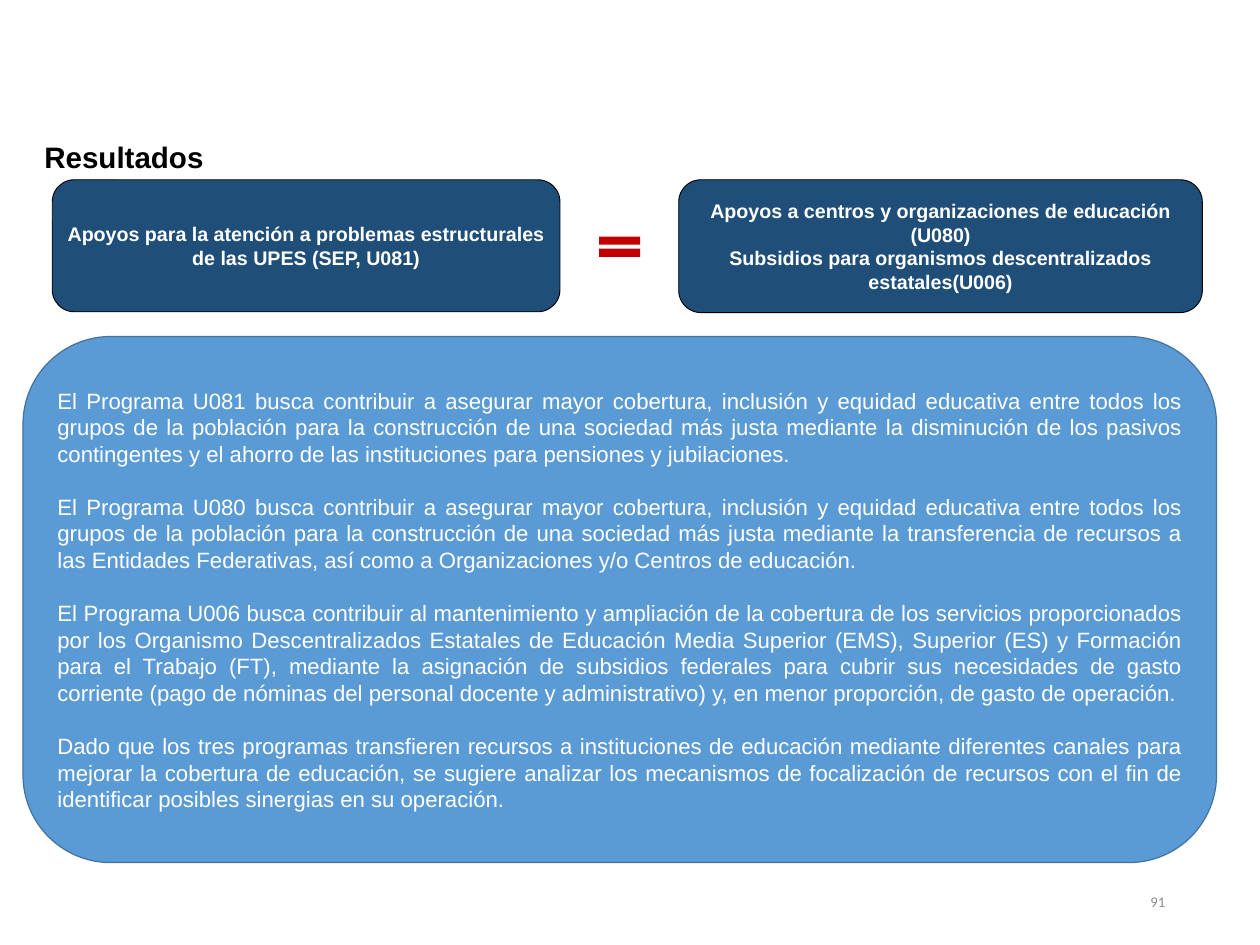
from pptx import Presentation
from pptx.dml.color import RGBColor
from pptx.enum.shapes import MSO_SHAPE
from pptx.enum.text import MSO_ANCHOR, MSO_AUTO_SIZE, PP_ALIGN
from pptx.util import Pt

ROUNDED = MSO_SHAPE.ROUNDED_RECTANGLE
EQUAL = MSO_SHAPE.MATH_EQUAL
MIDDLE = MSO_ANCHOR.MIDDLE
NO_AUTOFIT = MSO_AUTO_SIZE.NONE
LEFT, CENTER = PP_ALIGN.LEFT, PP_ALIGN.CENTER
RIGHT, JUSTIFY = PP_ALIGN.RIGHT, PP_ALIGN.JUSTIFY

BLACK = RGBColor(0x00, 0x00, 0x00)
WHITE = RGBColor(0xFF, 0xFF, 0xFF)
GRAY = RGBColor(0x8C, 0x8C, 0x8C)
NAVY = RGBColor(0x1F, 0x4E, 0x79)
RED = RGBColor(0xC0, 0x00, 0x00)
BLUE = RGBColor(0x5B, 0x9B, 0xD5)
BLUE_EDGE = RGBColor(0x43, 0x73, 0x9E)

EMU_PER_PX = 9144  # 100 px to the inch
TITLE_ONLY = 5

UPES_PROGRAM = ["Apoyos para la atención a problemas estructurales de las UPES (SEP, U081)"]
RELATED_PROGRAMS = [
    "Apoyos a centros y organizaciones de educación (U080)",
    "Subsidios para organismos descentralizados estatales(U006)",
]
FINDINGS = [
    "El Programa U081 busca contribuir a asegurar mayor cobertura, inclusión y equidad "
    "educativa entre todos los grupos de la población para la construcción de una sociedad "
    "más justa mediante la disminución de los pasivos contingentes y el ahorro de las "
    "instituciones para pensiones y jubilaciones.",
    "El Programa U080 busca contribuir a asegurar mayor cobertura, inclusión y equidad "
    "educativa entre todos los grupos de la población para la construcción de una sociedad "
    "más justa mediante la transferencia de recursos a las Entidades Federativas, así como a "
    "Organizaciones y/o Centros de educación.",
    "El Programa U006 busca contribuir al mantenimiento y ampliación de la cobertura de los "
    "servicios proporcionados por los Organismo Descentralizados Estatales de Educación Media "
    "Superior (EMS), Superior (ES) y Formación para el Trabajo (FT), mediante la asignación de "
    "subsidios federales para cubrir sus necesidades de gasto corriente (pago de nóminas del "
    "personal docente y administrativo) y, en menor proporción, de gasto de operación.",
    "Dado que los tres programas transfieren recursos a instituciones de educación mediante "
    "diferentes canales para mejorar la cobertura de educación, se sugiere analizar los "
    "mecanismos de focalización de recursos con el fin de identificar posibles sinergias en "
    "su operación.",
]


def px(*lengths):
    return [length * EMU_PER_PX for length in lengths]


class SlideBuilder:
    def __init__(self, deck, font="Arial"):
        self.slide = deck.slides.add_slide(deck.slide_layouts[TITLE_ONLY])
        self.font = font

    def set_text(self, box, texts, size, color, align, bold=False, font=None, gap=0):
        """Fill the box with one paragraph per text, gap points apart."""
        frame = box.text_frame
        frame.word_wrap = True
        frame.vertical_anchor = MIDDLE
        for index, text in enumerate(texts):
            para = frame.add_paragraph() if index else frame.paragraphs[0]
            para.text = text
            para.alignment = align
            para.space_before = Pt(gap if index else 0)
            para.font.name = font or self.font
            para.font.size = Pt(size)
            para.font.bold = bold
            para.font.color.rgb = color

    def title(self, place, text):
        box = self.slide.shapes.title
        box.left, box.top, box.width, box.height = px(*place)
        self.set_text(box, [text], 24, BLACK, LEFT, bold=True)
        frame = box.text_frame
        frame.word_wrap = False
        frame.auto_size = NO_AUTOFIT
        frame.margin_left, frame.margin_top, frame.margin_right, frame.margin_bottom = px(6, 6, 6, 6)

    def shape(self, kind, place, fill, edge=None, edge_width=0.75):
        shape = self.slide.shapes.add_shape(kind, *px(*place))
        shape.shadow.inherit = False
        shape.fill.solid()
        shape.fill.fore_color.rgb = fill
        if edge is None:
            shape.line.fill.background()
        else:
            shape.line.color.rgb = edge
            shape.line.width = Pt(edge_width)
        return shape

    def program(self, place, texts):
        box = self.shape(ROUNDED, place, NAVY, BLACK)
        self.set_text(box, texts, 16, WHITE, CENTER, bold=True)

    def findings(self, place, texts):
        box = self.shape(ROUNDED, place, BLUE, BLUE_EDGE, 1)
        self.set_text(box, texts, 18, WHITE, JUSTIFY, gap=21.6)

    def page_number(self, place, number):
        box = self.slide.shapes.add_textbox(*px(*place))
        self.set_text(box, [number], 12, GRAY, RIGHT, font="Calibri")


def main():
    deck = Presentation()
    deck.slide_width, deck.slide_height = px(1422, 1067)
    page = SlideBuilder(deck)
    page.title((44, 151, 193, 52), "Resultados")
    page.program((766, 203, 591, 150), RELATED_PROGRAMS)
    page.shape(EQUAL, (668, 259, 63, 39), RED)
    page.program((59, 203, 573, 149), UPES_PROGRAM)
    page.findings((26, 380, 1347, 594), FINDINGS)
    page.page_number((1005, 989, 320, 57), "91")
    deck.save("out.pptx")


if __name__ == "__main__":
    main()
